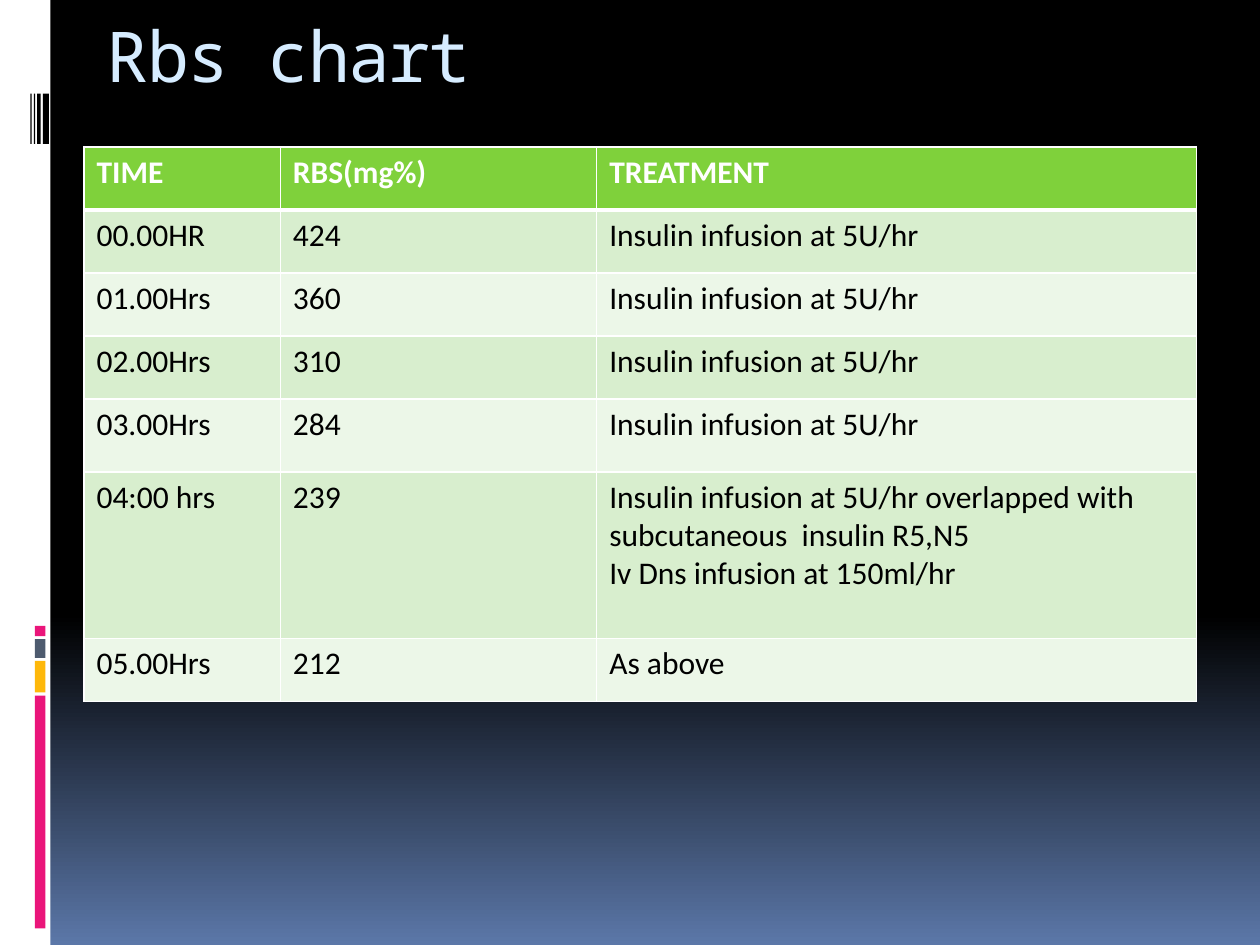
from lxml import etree
from pptx import Presentation
from pptx import util as u
from pptx.dml.color import RGBColor
from pptx.enum import shapes, text
from pptx.oxml.ns import qn

Pt = u.Pt
COLORS = {"white": "FFFFFF", "black": "000000", "pink": "EA157A", "amber": "FEB80A",
          "slate": "4E5B6F", "sky": "5B77A8", "title": "D6ECFF",
          "header": "7FD13B", "odd": "D8EECE", "even": "ECF7E8"}


def rgb(name):
    return RGBColor.from_string(COLORS[name])


def border(cell, side, width):
    """Give one side (L, R, T or B) of a cell a white line of width points."""
    ln = etree.SubElement(cell._tc.get_or_add_tcPr(), qn(f"a:ln{side}"), w=str(Pt(width)))
    fill = etree.SubElement(ln, qn("a:solidFill"))
    etree.SubElement(fill, qn("a:srgbClr"), val=COLORS["white"])


prs = Presentation()
prs.slide_width, prs.slide_height = Pt(720), Pt(540)
s = prs.slides.add_slide(prs.slide_layouts[6])

# Background: black, fading to blue in the lower third
bg = s.background.fill
bg.gradient()
bg.gradient_angle = 270
for stop, (position, color) in zip(bg.gradient_stops, [(0.65, "black"), (1, "sky")]):
    stop.position = position
    stop.color.rgb = rgb(color)

# Side strip with its coloured blocks and black bars
STRIP = [(0, 0, 28.8, 540, "white"),
         (20, 397.5, 6, 133, "pink"), (20, 377.7, 6, 18, "amber"),
         (20, 365.2, 6, 10.8, "slate"), (20, 357.7, 6, 5.8, "pink"),
         (24.5, 53.5, 3.5, 28.8, "black"), (21.2, 53.5, 2, 28.8, "black"),
         (19.4, 53.5, 0.7, 28.8, "black"), (17.4, 53.5, 0.7, 28.8, "black")]
for *place, color in STRIP:
    sp = s.shapes.add_shape(shapes.MSO_SHAPE.RECTANGLE, *map(Pt, place))
    sp.shadow.inherit = False
    sp.fill.solid()
    sp.fill.fore_color.rgb = rgb(color)
    sp.line.fill.background()

# Title
tf = s.shapes.add_textbox(Pt(54), Pt(0), Pt(606), Pt(62)).text_frame
tf.word_wrap = True
tf.vertical_anchor = text.MSO_ANCHOR.MIDDLE
r = tf.paragraphs[0].add_run()
r.text = "Rbs chart"
for name, value in {"size": Pt(40), "name": "Noto Sans Mono"}.items():
    setattr(r.font, name, value)
r.font.color.rgb = rgb("title")
r._r.get_or_add_rPr().set("spc", "-100")

# Table of readings and treatment
INFUSION = "Insulin infusion at 5U/hr"
ROWS = [("TIME", "RBS(mg%)", "TREATMENT"),
        ("00.00HR", "424", INFUSION),
        ("01.00Hrs", "360", INFUSION),
        ("02.00Hrs", "310", INFUSION),
        ("03.00Hrs", "284", INFUSION),
        ("04:00 hrs", "239", INFUSION + " overlapped with subcutaneous  insulin R5,N5\n"
                                        "Iv Dns infusion at 150ml/hr"),
        ("05.00Hrs", "212", "As above")]
WIDTHS = [112.2, 180.8, 342.8]
HEIGHTS = [36, 36, 36, 36, 41.6, 95.4, 36]

table = s.shapes.add_table(len(ROWS), len(WIDTHS), Pt(48), Pt(84),
                           Pt(sum(WIDTHS)), Pt(sum(HEIGHTS))).table
for column, width in zip(table.columns, WIDTHS):
    column.width = Pt(width)
for i, (row, height) in enumerate(zip(ROWS, HEIGHTS)):
    table.rows[i].height = Pt(height)
    header = i == 0
    font = {"size": Pt(18), "name": "Calibri", "bold": header}
    for j, words in enumerate(row):
        cell = table.cell(i, j)
        for side in "LRTB":
            thick = (i, side) in [(0, "B"), (1, "T")]
            border(cell, side, 3 if thick else 1)
        cell.fill.solid()
        cell.fill.fore_color.rgb = rgb("header" if header else "odd" if i % 2 else "even")
        cell.text = words
        for p in cell.text_frame.paragraphs:
            for r in p.runs:
                for name, value in font.items():
                    setattr(r.font, name, value)
                r.font.color.rgb = rgb("white" if header else "black")

prs.save("out.pptx")
